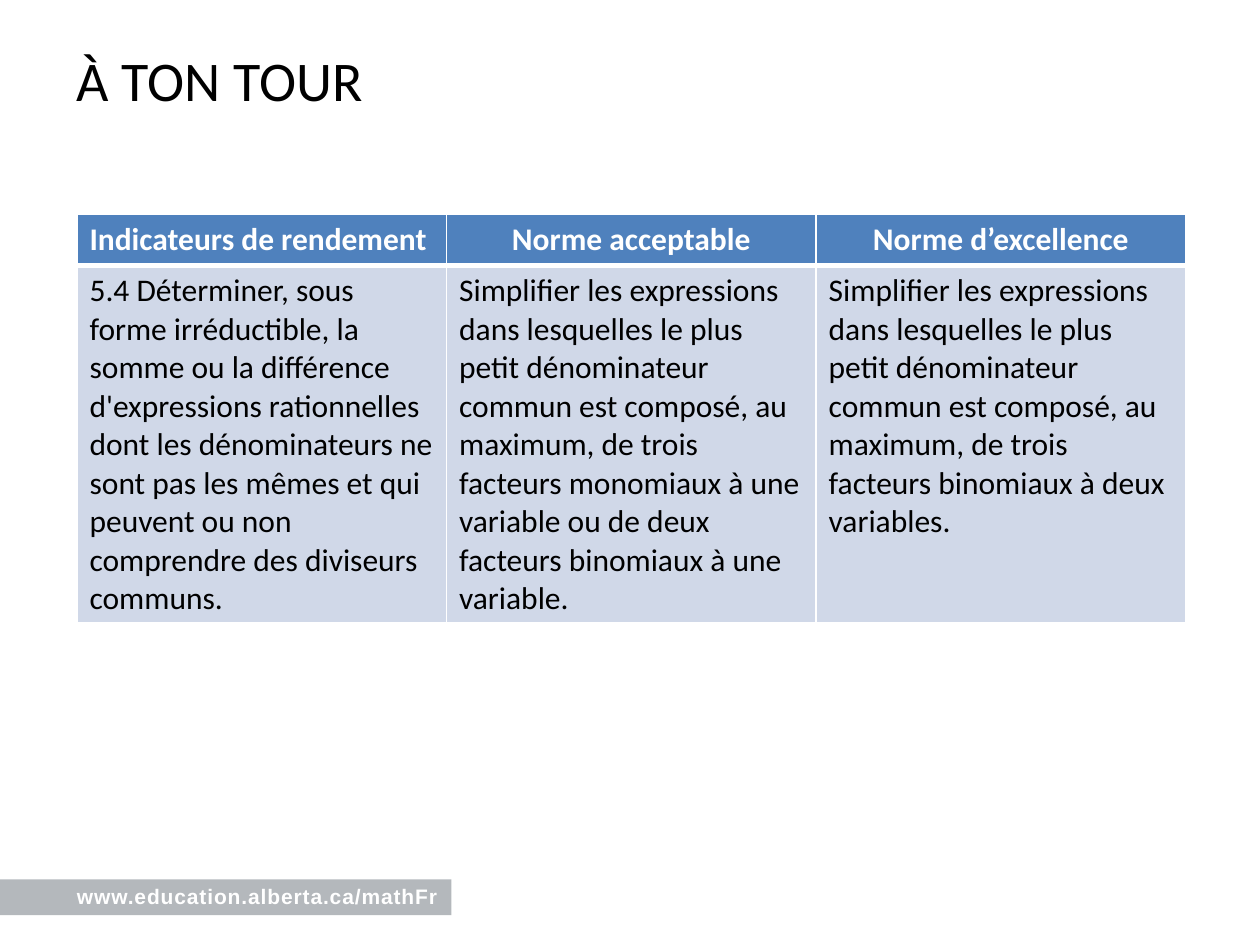
from lxml import etree
from pptx import Presentation
from pptx.dml.color import RGBColor
from pptx.enum.shapes import MSO_SHAPE
from pptx.enum.text import PP_ALIGN
from pptx.oxml.ns import qn
from pptx.util import Pt

RECTANGLE = MSO_SHAPE.RECTANGLE
LEFT, CENTER = PP_ALIGN.LEFT, PP_ALIGN.CENTER

WHITE = RGBColor(0xFF, 0xFF, 0xFF)
BLACK = RGBColor(0x00, 0x00, 0x00)
GREY = RGBColor(0x6A, 0x73, 0x7B)
BLUE = RGBColor(0x4F, 0x81, 0xBD)
PALE_BLUE = RGBColor(0xD0, 0xD8, 0xE8)

MARGIN = 44
HEADINGS = ["Indicateurs de rendement ", "Norme acceptable", "Norme d’excellence"]
STANDARDS = [
    "5.4 Déterminer, sous forme irréductible, la somme ou la différence "
    "d'expressions rationnelles dont les dénominateurs ne sont pas les mêmes "
    "et qui peuvent ou non comprendre des diviseurs communs.",
    "Simplifier les expressions dans lesquelles le plus petit dénominateur "
    "commun est composé, au maximum, de trois facteurs monomiaux à une "
    "variable ou de deux facteurs binomiaux à une variable.",
    "Simplifier les expressions dans lesquelles le plus petit dénominateur "
    "commun est composé, au maximum, de trois facteurs binomiaux à deux "
    "variables.",
]


class SlideBuilder:
    body_font = "Calibri"
    footer_font = "Arial"

    def __init__(self, slide):
        self.slide = slide

    def add_run(self, frame, text, size, color, font=None, bold=False, align=LEFT):
        paragraph = frame.paragraphs[0]
        paragraph.alignment = align
        run = paragraph.add_run()
        run.text = text
        run.font.name = font or self.body_font
        run.font.size = Pt(size)
        run.font.bold = bold
        run.font.color.rgb = color
        return run

    def band(self, left, top, width, height, color, opacity):
        band = self.slide.shapes.add_shape(
            RECTANGLE, Pt(left), Pt(top), Pt(width), Pt(height))
        band.shadow.inherit = False
        band.line.fill.background()
        band.fill.solid()
        band.fill.fore_color.rgb = color
        tint = band._element.spPr.find(qn("a:solidFill"))[0]
        etree.SubElement(tint, qn("a:alpha"), val=str(opacity * 1000))

    def text(self, left, top, width, height, text, size, color,
             font=None, bold=False, spacing=0):
        box = self.slide.shapes.add_textbox(
            Pt(left), Pt(top), Pt(width), Pt(height))
        frame = box.text_frame
        frame.word_wrap = True
        frame.margin_left = frame.margin_right = 0
        frame.margin_top = frame.margin_bottom = 0
        run = self.add_run(frame, text, size, color, font, bold)
        if spacing:
            run._r.get_or_add_rPr().set("spc", str(round(spacing * 100)))

    def borders(self, cell, **widths):
        properties = cell._tc.get_or_add_tcPr()
        for side in "LRTB":
            line = etree.SubElement(properties, qn(f"a:ln{side}"),
                                    w=str(Pt(widths.get(side, 1))))
            fill = etree.SubElement(line, qn("a:solidFill"))
            etree.SubElement(fill, qn("a:srgbClr"), val=str(WHITE))

    def table(self, left, top, column_width, row_heights, rows):
        columns = len(rows[0])
        table = self.slide.shapes.add_table(
            len(rows), columns, Pt(left), Pt(top),
            Pt(column_width * columns), Pt(sum(row_heights))).table
        for column in table.columns:
            column.width = Pt(column_width)
        for r, (height, texts) in enumerate(zip(row_heights, rows)):
            table.rows[r].height = Pt(height)
            header = r == 0
            for c, text in enumerate(texts):
                cell = table.cell(r, c)
                # A heavier rule separates the header from the body
                self.borders(cell, **({"B": 3} if header else {"T": 3}))
                cell.fill.solid()
                cell.fill.fore_color.rgb = BLUE if header else PALE_BLUE
                self.add_run(cell.text_frame, text, 18,
                             WHITE if header else BLACK, bold=header,
                             align=CENTER if header else LEFT)


def main():
    presentation = Presentation()
    presentation.slide_width = Pt(720)
    presentation.slide_height = Pt(540)
    builder = SlideBuilder(
        presentation.slides.add_slide(presentation.slide_layouts[6]))

    # Footer band with the web address
    builder.band(0, 502.5, 258, 20.5, GREY, 50)
    builder.text(MARGIN, 505, 214, 14.5, "www.education.alberta.ca/mathFr", 12,
                 WHITE, font=SlideBuilder.footer_font, bold=True, spacing=0.5)

    # Title
    builder.text(MARGIN, 26, 465, 51, "À TON TOUR", 32, BLACK)

    # Performance indicators and standards
    builder.table(MARGIN, 122.6, 211.2, [29.2, 204], [HEADINGS, STANDARDS])

    presentation.save("out.pptx")


if __name__ == "__main__":
    main()
